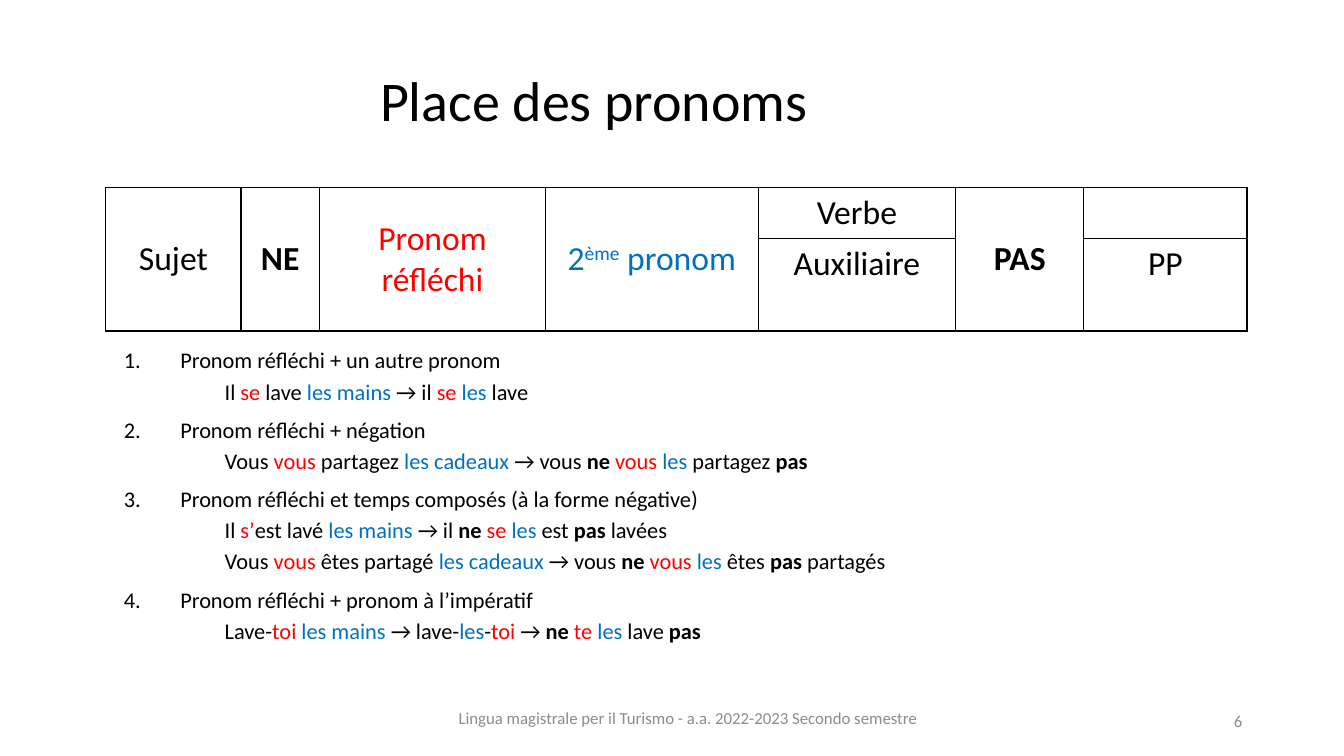
from lxml import etree
from pptx import Presentation
from pptx import util as u
from pptx.dml.color import RGBColor
from pptx.enum import text
from pptx.oxml import ns

BLACK = RGBColor(0x00, 0x00, 0x00)
RED = RGBColor(0xFF, 0x00, 0x00)
BLUE = RGBColor(0x00, 0x70, 0xC0)
GREY = RGBColor(0x8C, 0x8C, 0x8C)

CENTER = text.PP_ALIGN.CENTER
MIDDLE = text.MSO_ANCHOR.MIDDLE
NEGATION = {"bold": True}


def reflexive(words):
    return words, {"color": RED}


def second(words):
    return words, {"color": BLUE}


def negation(words):
    return words, NEGATION


RULES = [
    ("Pronom réfléchi + un autre pronom", [
        ["Il ", reflexive("se"), " lave ", second("les mains"), " → il ",
         reflexive("se "), second("les"), " lave"],
    ]),
    ("Pronom réfléchi + négation", [
        ["Vous ", reflexive("vous"), " partagez ", second("les cadeaux "),
         "→ vous ", negation("ne "), reflexive("vous "), second("les"),
         " partagez ", negation("pas")],
    ]),
    ("Pronom réfléchi et temps composés (à la forme négative)", [
        ["Il ", reflexive("s’"), "est lavé ", second("les mains "), "→ il ",
         negation("ne "), reflexive("se "), second("les"), " est ",
         negation("pas"), " lavées"],
        ["Vous ", reflexive("vous"), " êtes partagé ", second("les cadeaux "),
         "→ vous ", negation("ne "), reflexive("vous "), second("les"),
         " êtes ", negation("pas"), " partagés"],
    ]),
    ("Pronom réfléchi + pronom à l’impératif", [
        ["Lave-", reflexive("toi "), second("les mains "), "→ lave-",
         second("les"), "-", reflexive("toi"), " → ", negation("ne "),
         reflexive("te "), second("les"), " lave ", negation("pas")],
    ]),
]

WORD_ORDER = [
    (1.34, [["Sujet"]]),
    (0.78, [[negation("NE")]]),
    (2.24, [[reflexive("Pronom réfléchi")]]),
    (2.11, [[second("2"), ("ème", {"color": BLUE, "raised": True}), second(" pronom")]]),
    (1.96, [["Verbe"], ["Auxiliaire"]]),
    (1.27, [[negation("PAS")]]),
    (1.62, [[], ["PP"]]),
]
ROW_HEIGHTS = [0.51, 0.91]


class SlideBuilder:
    font_name = "Calibri"

    def __init__(self, slide):
        self.slide = slide

    def add_words(self, paragraph, parts, size, color=BLACK, **layout):
        for key, value in layout.items():
            setattr(paragraph, key, value)
        paragraph.font.size = u.Pt(size)
        for part in parts:
            words, style = (part, {}) if isinstance(part, str) else part
            run = paragraph.add_run()
            run.text = words
            settings = {"name": self.font_name, "size": u.Pt(size),
                        "bold": style.get("bold", False)}
            for key, value in settings.items():
                setattr(run.font, key, value)
            run.font.color.rgb = style.get("color", color)
            if style.get("raised"):
                run.font._element.set("baseline", "30000")

    def text_frame(self, box, anchor=text.MSO_ANCHOR.TOP):
        frame = self.slide.shapes.add_textbox(*map(u.Inches, box)).text_frame
        settings = {"word_wrap": True, "vertical_anchor": anchor,
                    "auto_size": text.MSO_AUTO_SIZE.NONE}
        for key, value in settings.items():
            setattr(frame, key, value)
        return frame

    def label(self, box, words, size, color=BLACK, align=CENTER):
        frame = self.text_frame(box, MIDDLE)
        self.add_words(frame.paragraphs[0], [words], size, color, alignment=align)

    def indent(self, paragraph, left, first, number=False):
        props = paragraph._p.get_or_add_pPr()
        props.set("marL", str(u.Inches(left)))
        props.set("indent", str(u.Inches(first)))
        bullet = etree.Element(ns.qn("a:buAutoNum" if number else "a:buNone"))
        if number:
            bullet.set("type", "arabicPeriod")
        defaults = props.find(ns.qn("a:defRPr"))
        if defaults is None:
            props.append(bullet)
        else:
            defaults.addprevious(bullet)

    def numbered_rules(self, box, rules, size):
        frame = self.text_frame(box)
        paragraph = frame.paragraphs[0]
        for index, (rule, examples) in enumerate(rules):
            if index:
                paragraph = frame.add_paragraph()
            self.add_words(paragraph, [rule], size, line_spacing=0.9, space_before=u.Pt(10))
            self.indent(paragraph, 0.56, -0.56, number=True)
            for example in examples:
                line = frame.add_paragraph()
                self.add_words(line, example, size, level=2, line_spacing=0.9,
                               space_before=u.Pt(5))
                self.indent(line, 1, 0)

    def borders(self, cell):
        props = cell._tc.get_or_add_tcPr()
        for position, side in enumerate(("lnL", "lnR", "lnT", "lnB")):
            line = etree.Element(ns.qn(f"a:{side}"), w=str(u.Pt(1)))
            fill = etree.SubElement(line, ns.qn("a:solidFill"))
            etree.SubElement(fill, ns.qn("a:srgbClr"), val=str(BLACK))
            props.insert(position, line)

    def word_order_table(self, left, top, columns, heights, size):
        width = sum(column_width for column_width, _ in columns)
        box = map(u.Inches, (left, top, width, sum(heights)))
        table = self.slide.shapes.add_table(len(heights), len(columns), *box).table
        table.first_row = table.horz_banding = False
        for row, height in zip(table.rows, heights):
            row.height = u.Inches(height)
        for index, (column_width, entries) in enumerate(columns):
            table.columns[index].width = u.Inches(column_width)
            cells = [table.cell(row, index) for row in range(len(heights))]
            for cell in cells:
                cell.fill.background()
                self.borders(cell)
            if len(entries) == 1:
                cells[0].merge(cells[-1])
                cells[0].vertical_anchor = MIDDLE
            for cell, parts in zip(cells, entries):
                self.add_words(cell.text_frame.paragraphs[0], parts, size, alignment=CENTER)


def main():
    deck = Presentation()
    deck.slide_width = u.Inches(13.33)
    deck.slide_height = u.Inches(7.5)
    builder = SlideBuilder(deck.slides.add_slide(deck.slide_layouts[6]))
    builder.numbered_rules((1.13, 3.42, 11.15, 3.3), RULES, 16)
    builder.word_order_table(1.05, 1.86, WORD_ORDER, ROW_HEIGHTS, 24)
    builder.label((4.42, 6.95, 4.81, 0.35),
                  "Lingua magistrale per il Turismo - a.a. 2022-2023 Secondo semestre",
                  12, GREY)
    builder.label((9.42, 6.95, 3, 0.4), "6", 12, GREY, text.PP_ALIGN.RIGHT)
    builder.label((3.57, 0.6, 4.64, 0.77), "Place des pronoms", 40)
    deck.save("out.pptx")


if __name__ == "__main__":
    main()
